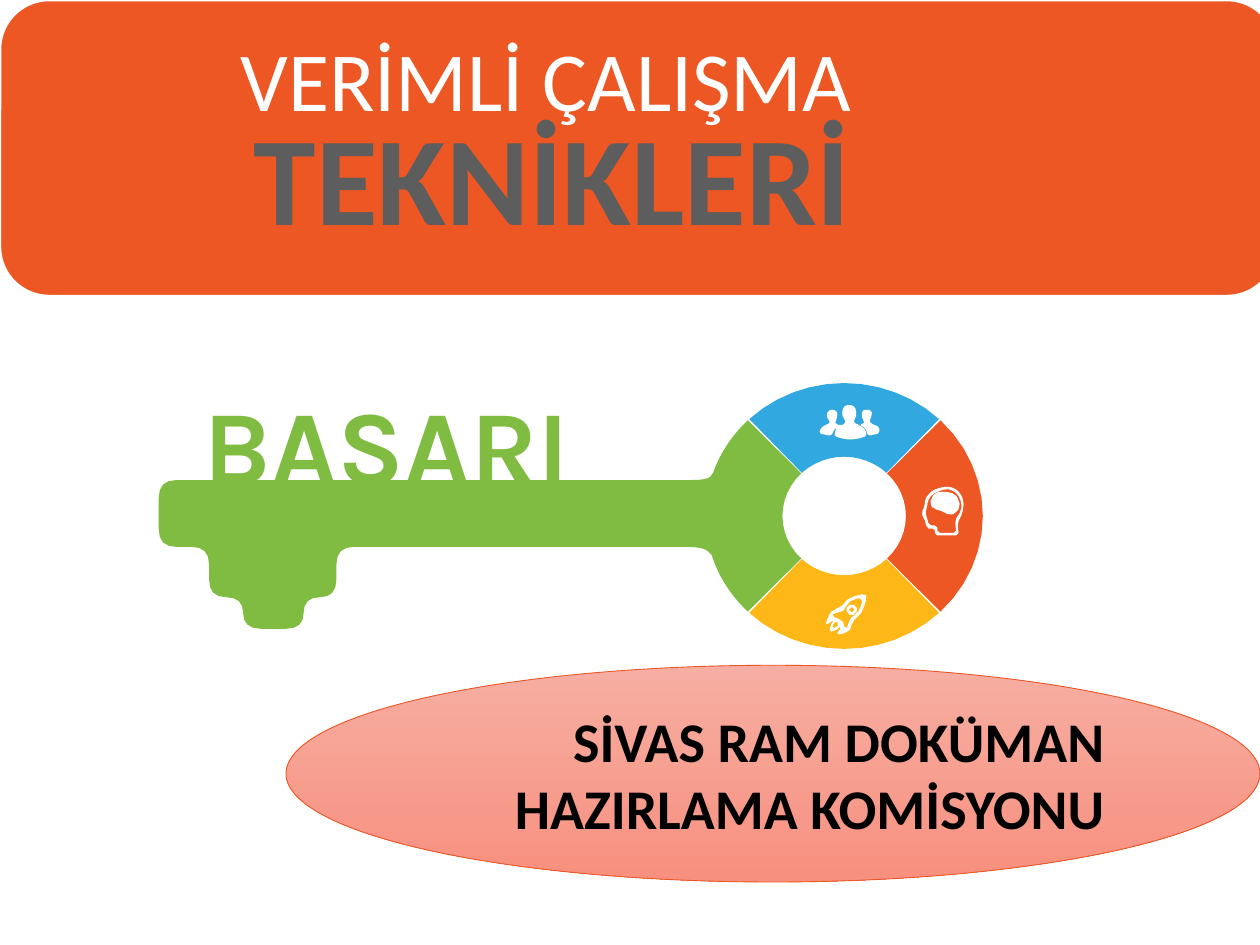
from math import cos, dist, radians, sin
from typing import NamedTuple

from pptx import Presentation
from pptx.dml.color import RGBColor
from pptx.enum.shapes import MSO_SHAPE as Preset
from pptx.enum.text import MSO_ANCHOR as Anchor, PP_ALIGN as Align
from pptx.util import Inches, Pt

COLUMNS = 100
ORANGE, GREEN, BLUE, YELLOW, WHITE = "EC5724", "7FBC41", "31A8DF", "FDB817", "FFFFFF"
CENTER, OUTER, INNER = (67, 40.95), (11, 10.55), (4.9, 4.7)
KEY_STEPS, ICON_STEPS, ARC_STEPS = 4, 1, 12

Point = tuple[float, float]
Contour = list[Point]


class Segment(NamedTuple):
    middle: float
    half_span: float
    color: str


class Icon(NamedTuple):
    radius: float
    contours: list[Contour]


class Caption(NamedTuple):
    text: str
    box: tuple[float, float, float, float]
    font: dict
    color: str
    align: Align = Align.LEFT
    wrap: bool = True


SEGMENTS = [Segment(270, 43.2, BLUE), Segment(90, 43.2, YELLOW), Segment(0, 46, ORANGE)]

BIT = [(12.6, 38.1), (12.6, 43.4), (16.6, 43.4), (16.6, 47.4), (19.3, 47.4), (19.3, 49.9),
       (24.1, 49.9), (24.1, 47.4), (26.7, 47.4), (26.7, 43.4)]

ROCKET = [
    Icon(0.3, [
        [(65.5, 49.7), (65.6, 49.2), (66.1, 48.3), (66.7, 48.3), (67.1, 47.7), (67.5, 47.4),
         (68.7, 47.1), (68.8, 47.4), (68.5, 48.4), (68.2, 48.9), (67.6, 49.3), (67.6, 49.8),
         (67.3, 50.2), (66.3, 50.4), (66.6, 50.1), (66.8, 49.7), (66.3, 49.2), (65.8, 49.4)],
        [(67.6, 47.6), (67.3, 47.9), (66.8, 48.7), (66.3, 48.5), (65.9, 49), (66.6, 49),
         (66.8, 49.4), (67, 49.3), (67, 50), (67.4, 49.7), (67.3, 49.2), (68, 48.7),
         (68.3, 48.3), (68.5, 47.4)],
    ]),
    Icon(0.25, [
        [(67.2, 48), (68, 48), (68, 48.8), (67.2, 48.8)],
        [(67.37, 48.17), (67.83, 48.17), (67.83, 48.63), (67.37, 48.63)],
    ]),
    Icon(0.2, [
        [(65.8, 50.2), (66, 49.4), (66.4, 49.1), (66.8, 49.5), (66.6, 49.9)],
        [(66, 49.9), (66.2, 49.4), (66.4, 49.3), (66.6, 49.5), (66.4, 49.8)],
    ]),
]

MIND = [
    Icon(0.2, [
        [(75, 38.6), (74, 38.9), (73.4, 39.6), (73.4, 40.2), (73.1, 40.7), (73.3, 41.1),
         (73.5, 41.5), (73.5, 41.9), (73.9, 42), (74.2, 41.9), (74.2, 42.5), (76.1, 42.5),
         (76, 41.5), (76.4, 40.7), (76.5, 39.8), (76.2, 39.1), (75.7, 38.7)],
        [(75, 38.8), (74, 39.2), (73.6, 39.8), (73.6, 40.3), (73.4, 40.7), (73.6, 41.1),
         (73.7, 41.7), (74.4, 41.7), (74.4, 42.3), (75.9, 42.3), (75.8, 41.3), (76.3, 40.5),
         (76.3, 39.8), (76, 39.2), (75.6, 38.9)],
    ]),
    Icon(0.2, [
        [(75, 39), (74.2, 39.1), (73.9, 39.6), (73.8, 40), (74.1, 40.4), (74.6, 40.5),
         (75, 40.7), (75.4, 40.9), (75.9, 40.7), (76.2, 40.2), (76.1, 39.7), (75.8, 39.2)],
    ]),
]

TEAM = [
    Icon(0.15, [
        [(67.7, 33.5), (67.9, 33.2), (68, 32.8), (67.9, 32.6), (67.9, 32.3), (67.4, 32.1),
         (66.9, 32.3), (66.9, 32.6), (66.8, 32.9), (67.1, 33.4), (67.1, 33.6), (66.7, 33.8),
         (66.3, 33.6), (66.3, 33.5), (66.5, 33), (66.4, 32.6), (66.1, 32.5), (65.7, 32.6),
         (65.6, 33.1), (65.9, 33.5), (65.8, 33.6), (65.2, 33.9), (65, 34.4), (66, 34.6),
         (66.2, 34.1), (66.4, 33.9), (66.2, 34.6), (66.8, 34.8), (67.5, 34.9), (68.2, 34.8),
         (68.8, 34.6), (68.7, 34.1), (68.3, 33.8)],
    ]),
    Icon(0.15, [
        [(69.8, 33.9), (69.1, 33.6), (69, 33.4), (69.2, 33), (69.2, 32.6), (68.8, 32.5),
         (68.4, 32.6), (68.4, 33.1), (68.6, 33.5), (68.6, 33.6), (68.2, 33.7), (68.7, 34),
         (68.9, 34.6), (69.8, 34.4)],
    ]),
]

BASARI = Caption("BAŞARI", (15.2, 29.6, 33, 11.1),
                 {"name": "Karla", "size": Pt(60), "bold": True}, GREEN, wrap=False)
TITLE = [
    Caption("TEKNİKLERİ", (15.8, 7.4, 56.1, 13.1),
            {"name": "Calibri", "size": Pt(72), "bold": True}, "5D5D5D", Align.CENTER),
    Caption("VERİMLİ ÇALIŞMA", (18.1, 1.7, 53.5, 9.1),
            {"name": "Calibri", "size": Pt(48), "bold": False}, WHITE),
]
COMMISSION = Caption("SİVAS RAM DOKÜMAN HAZIRLAMA KOMİSYONU", (22.7, 52.8, 77.3, 17.2),
                     {"name": "Calibri", "size": Pt(32), "bold": True}, "000000", Align.RIGHT)

deck = Presentation()
deck.slide_width, deck.slide_height = Inches(10), Inches(7.5)
CELL = deck.slide_width / COLUMNS
shapes = deck.slides.add_slide(deck.slide_layouts[6]).shapes


def cells(*lengths: float) -> list[int]:
    """Turn grid cells into slide lengths."""
    return [round(length * CELL) for length in lengths]


def rgb(color: str) -> RGBColor:
    """Turn a hex string into a colour."""
    return RGBColor.from_string(color)


def arc(radii: Point, start: float, end: float) -> Contour:
    """Return points on the key's ring between two angles in degrees."""
    angles = [radians(start + (end - start) * i / ARC_STEPS) for i in range(ARC_STEPS + 1)]
    return [(CENTER[0] + radii[0] * cos(a), CENTER[1] + radii[1] * sin(a)) for a in angles]


def rounded(corners: Contour, radius: float, steps: int) -> Contour:
    """Round each corner of a closed outline with a quadratic curve."""
    curve = []
    for i, corner in enumerate(corners):
        ends = []
        for near in (corners[i - 1], corners[(i + 1) % len(corners)]):
            share = min(radius / dist(corner, near), 0.5)
            ends.append([c + (n - c) * share for c, n in zip(corner, near)])
        for t in (step / steps for step in range(steps + 1)):
            curve.append(tuple((1 - t) ** 2 * a + 2 * t * (1 - t) * c + t * t * b
                               for a, c, b in zip(ends[0], corner, ends[1])))
    return curve


def draw_outline(contours: list[Contour], color: str) -> None:
    """Draw closed contours as one filled shape."""
    builder = shapes.build_freeform(*cells(*contours[0][0]))
    for i, contour in enumerate(contours):
        if i:
            builder.move_to(*cells(*contour[0]))
        builder.add_line_segments([cells(*point) for point in contour[1:]], close=True)
    outline = builder.convert_to_shape()
    outline.shadow.inherit = False
    outline.fill.solid()
    outline.fill.fore_color.rgb = rgb(color)
    outline.line.fill.background()


def draw_icon(icon: list[Icon]) -> None:
    """Draw the white parts of one icon."""
    for part in icon:
        draw_outline([rounded(contour, part.radius, ICON_STEPS) for contour in part.contours],
                     WHITE)


def write(frame, caption: Caption) -> None:
    """Write a caption into a text frame."""
    frame.word_wrap = caption.wrap
    paragraph = frame.paragraphs[0]
    paragraph.alignment = caption.align
    run = paragraph.add_run()
    run.text = caption.text
    for attribute, value in caption.font.items():
        setattr(run.font, attribute, value)
    run.font.color.rgb = rgb(caption.color)


def draw_key() -> None:
    """Draw the key with its coloured ring."""
    for segment in SEGMENTS:
        start, end = segment.middle - segment.half_span, segment.middle + segment.half_span
        draw_outline([arc(OUTER, start, end) + arc(INNER, end, start)], segment.color)
    bow = arc(OUTER, 163, 134) + arc(INNER, 134, 226) + arc(OUTER, 226, 199)
    shank = rounded(BIT + [(55.8, 43.4), bow[0], bow[-1], (56.2, 38.1)], 1.4, KEY_STEPS)
    joint = (KEY_STEPS + 1) * (len(BIT) + 1)
    draw_outline([shank[:joint] + bow + shank[-KEY_STEPS - 1:]], GREEN)


def draw_panel(preset: Preset, box: tuple, line: str, width: float):
    """Add a preset shape with an outline and return it."""
    panel = shapes.add_shape(preset, *cells(*box))
    panel.shadow.inherit = False
    panel.line.color.rgb, panel.line.width = rgb(line), Pt(width)
    return panel


banner = draw_panel(Preset.ROUNDED_RECTANGLE, (0, 0, 101.3, 23.5), WHITE, 1.5)
banner.fill.solid()
banner.fill.fore_color.rgb = rgb(ORANGE)
draw_key()
for caption in (BASARI, *TITLE):
    write(shapes.add_textbox(*cells(*caption.box)).text_frame, caption)
for icon in (ROCKET, MIND, TEAM):
    draw_icon(icon)
signature = draw_panel(Preset.OVAL, COMMISSION.box, ORANGE, 0.5)
signature.fill.gradient()
signature.fill.gradient_angle = 270
for stop, color, place in zip(signature.fill.gradient_stops, ("F7AEA2", "F7907F"), (0, 1)):
    stop.color.rgb, stop.position = rgb(color), place
signature.text_frame.vertical_anchor = Anchor.MIDDLE
write(signature.text_frame, COMMISSION)
deck.save("out.pptx")
